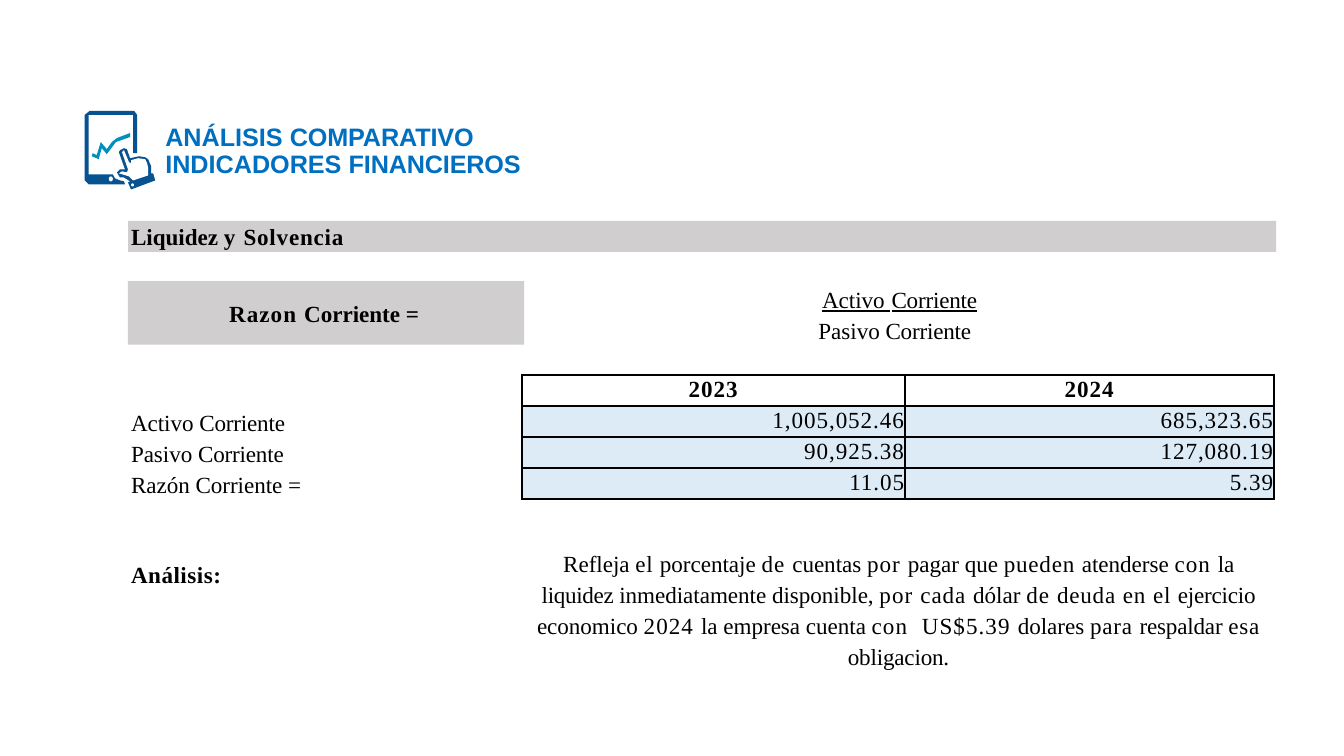
from dataclasses import dataclass

from lxml import etree
from pptx import Presentation
from pptx.dml.color import RGBColor
from pptx.enum.shapes import MSO_SHAPE
from pptx.enum.text import MSO_ANCHOR, PP_ALIGN
from pptx.oxml.ns import qn
from pptx.util import Inches, Pt

LEFT, CENTER, RIGHT = PP_ALIGN.LEFT, PP_ALIGN.CENTER, PP_ALIGN.RIGHT
TOP, MIDDLE = MSO_ANCHOR.TOP, MSO_ANCHOR.MIDDLE
RECTANGLE, OVAL = MSO_SHAPE.RECTANGLE, MSO_SHAPE.OVAL

# Square grid: 133.33 columns by 75 rows
CELL = Inches(0.1)
COLUMNS, ROWS = 133.33, 75
TITLE_ONLY = 5
LINE_ROWS = 3.08


@dataclass(frozen=True)
class Theme:
    heading_font: str = "Arial"
    body_font: str = "Times New Roman"
    heading_size: float = 18
    body_size: float = 16.5
    border_width: float = 1.5
    heading: str = "006FC0"
    ink: str = "000000"
    band: str = "D0CECE"
    paper: str = "FFFFFF"
    figure: str = "DDEBF7"
    device: str = "075392"
    trend: str = "0090BE"


@dataclass(frozen=True)
class Area:
    column: float
    row: float
    width: float
    height: float

    def emu(self) -> tuple[int, ...]:
        return tuple(grid(n) for n in (self.column, self.row, self.width, self.height))


@dataclass(frozen=True)
class Span:
    text: str
    spacing: float = 0


@dataclass(frozen=True)
class Block:
    """Text in an area; insets are in grid cells, fill is a colour or empty."""
    area: Area
    lines: list[list[Span]]
    align: PP_ALIGN = LEFT
    bold: bool = False
    underline: bool = False
    line_spacing: float = 1.0
    fill: str = ""
    anchor: MSO_ANCHOR = TOP
    left: float = 0.1
    top: float = 0.4
    right: float = 0


@dataclass(frozen=True)
class Outline:
    """Closed polygon with points in tenths of a grid cell."""
    fill: str
    points: list[tuple[int, int]]


THEME = Theme()

ICON = [
    Outline(THEME.device, [
        (136, 152), (136, 114), (133, 110), (89, 110), (84, 114), (84, 179),
        (88, 183), (124, 183), (123, 180), (119, 179), (114, 177), (112, 173),
        (88, 173), (88, 114), (132, 114), (132, 152)]),
    Outline(THEME.device, [
        (154, 179), (152, 172), (150, 172), (150, 165), (147, 158), (144, 156),
        (138, 155), (129, 157), (126, 148), (123, 147), (119, 149), (118, 151),
        (124, 168), (119, 168), (116, 171), (119, 176), (123, 176), (129, 180),
        (127, 181), (130, 188)]),
    Outline(THEME.paper, [
        (147, 174), (132, 179), (128, 175), (118, 172), (121, 170), (126, 171),
        (127, 168), (121, 151), (123, 149), (128, 161), (130, 162), (130, 159),
        (137, 157), (144, 158), (146, 162), (147, 167)]),
    Outline(THEME.trend, [
        (129, 132), (116, 137), (111, 141), (106, 148), (100, 141), (96, 154),
        (92, 152), (91, 155), (98, 158), (101, 147), (106, 153), (115, 141),
        (129, 136)]),
]
ICON_BUTTONS = [Area(10.8, 17.5, 0.4, 0.5), Area(13, 18.2, 0.3, 0.3)]

TITLE = [Span("ANÁLISIS "), Span("COMPARATIVO ", -0.1), Span("INDICADORES "),
         Span("FINANCIEROS", -0.1)]

ANALYSIS = [
    Span("Refleja "), Span("el ", 0.5), Span("porcentaje "), Span("de ", 0.8),
    Span("cuentas "), Span("por ", 0.8), Span("pagar que "), Span("pueden ", 0.6),
    Span("atenderse "), Span("con ", 0.8), Span("la liquidez ", -0.2),
    Span("inmediatamente disponible, "), Span("por ", 0.8), Span("cada ", 0.7),
    Span("dólar "), Span("de ", 0.8), Span("deuda ", 0.6), Span("en ", 0.7),
    Span("el ", 0.5), Span("ejercicio ", -0.1), Span("economico "),
    Span("2024 ", 0.8), Span("la empresa cuenta "), Span("con  US$5.39 ", 0.8),
    Span("dolares "), Span("para ", 0.6), Span("respaldar ", -0.1),
    Span("esa ", 0.6), Span("obligacion.", -0.1)]

BLOCKS = [
    Block(Area(12.7, 21.9, 113.9, 3.1),
          [[Span("Liquidez "), Span("y ", 0.9), Span("Solvencia", 0.6)]],
          bold=True, fill=THEME.band, left=0.3, top=0.15),
    Block(Area(12.7, 27.9, 39.3, 6.3),
          [[Span("Razon ", 0.8), Span("Corriente "), Span("=", 0.5)]],
          align=CENTER, bold=True, fill=THEME.band, anchor=MIDDLE,
          left=0, top=0, right=0.4),
    Block(Area(51.7, 27.9, 75.1, 3.1),
          [[Span("Activo"), Span(" ", 0.8), Span("Corriente", -0.1)]],
          align=CENTER, underline=True, left=0),
    Block(Area(81.1, 31, 16.3, 3.1), [[Span("Pasivo "), Span("Corriente", -0.1)]]),
    Block(Area(12.9, 40, 20, 9.5),
          [[Span("Activo "), Span("Corriente", -0.1)],
           [Span("Pasivo "), Span("Corriente", -0.1)],
           [Span("Razón Corriente "), Span("=", 0.6)]],
          line_spacing=1.12, top=0.23),
    Block(Area(12.9, 55.2, 9.5, 3.1), [[Span("Análisis:", 0.4)]], bold=True),
    Block(Area(53.1, 54, 72, 12.6), [ANALYSIS], align=CENTER,
          line_spacing=1.12, top=0.23),
]

RATIO_AREA = Area(51.8, 37.2, 74.6, 4 * LINE_ROWS)
RATIO_COLUMNS = [38, 36.6]
RATIO_ROWS = [
    ["2023", "2024"],
    ["1,005,052.46", "685,323.65"],
    ["90,925.38", "127,080.19"],
    ["11.05", "5.39"],
]


def grid(cells: float) -> int:
    return round(cells * CELL)


def color(code: str) -> RGBColor:
    return RGBColor.from_string(code)


def set_insets(target, left: float, top: float, right: float) -> None:
    target.margin_left, target.margin_top = grid(left), grid(top)
    target.margin_right, target.margin_bottom = grid(right), 0


def write(para, spans: list[Span], align=LEFT, bold=False, underline=False,
          name=THEME.body_font, size=THEME.body_size, ink=THEME.ink) -> None:
    para.alignment = align
    font = para.font
    font.name, font.size, font.bold = name, Pt(size), bold
    font.underline = underline
    font.color.rgb = color(ink)
    for span in spans:
        run = para.add_run()
        run.text = span.text
        if span.spacing:
            run.font._element.set("spc", str(round(span.spacing * 100)))


def paint(shape, fill: str) -> None:
    shape.shadow.inherit = False
    shape.fill.solid()
    shape.fill.fore_color.rgb = color(fill)
    shape.line.fill.background()


def draw_title(page) -> None:
    title = page.shapes.title
    title.left, title.top, title.width, title.height = Area(16.3, 11.7, 37, 6).emu()
    frame = title.text_frame
    frame.word_wrap, frame.vertical_anchor = True, TOP
    set_insets(frame, 0.1, 0.6, 0)
    para = frame.paragraphs[0]
    para.line_spacing, para.space_before = Pt(19.4), Pt(0)
    write(para, TITLE, bold=True, name=THEME.heading_font,
          size=THEME.heading_size, ink=THEME.heading)


def draw_icon(page) -> None:
    for outline in ICON:
        builder = page.shapes.build_freeform(*outline.points[0], scale=CELL / 10)
        builder.add_line_segments(outline.points[1:], close=True)
        paint(builder.convert_to_shape(), outline.fill)
    for button in ICON_BUTTONS:
        paint(page.shapes.add_shape(OVAL, *button.emu()), THEME.paper)


def draw_block(page, block: Block) -> None:
    if block.fill:
        box = page.shapes.add_shape(RECTANGLE, *block.area.emu())
        paint(box, block.fill)
    else:
        box = page.shapes.add_textbox(*block.area.emu())
    frame = box.text_frame
    frame.word_wrap, frame.vertical_anchor = True, block.anchor
    set_insets(frame, block.left, block.top, block.right)
    for index, spans in enumerate(block.lines):
        para = frame.paragraphs[0] if index == 0 else frame.add_paragraph()
        para.line_spacing = block.line_spacing
        write(para, spans, block.align, block.bold, block.underline)


def add_borders(cell) -> None:
    properties = cell._tc.get_or_add_tcPr()
    for side in ("a:lnL", "a:lnR", "a:lnT", "a:lnB"):
        line = etree.SubElement(properties, qn(side), w=str(Pt(THEME.border_width)))
        fill = etree.SubElement(line, qn("a:solidFill"))
        etree.SubElement(fill, qn("a:srgbClr"), val=THEME.ink)


def draw_ratio_table(page) -> None:
    table = page.shapes.add_table(
        len(RATIO_ROWS), len(RATIO_COLUMNS), *RATIO_AREA.emu()).table
    table.first_row = table.horz_banding = False
    for column, width in zip(table.columns, RATIO_COLUMNS):
        column.width = grid(width)
    for row_index, values in enumerate(RATIO_ROWS):
        header = row_index == 0
        table.rows[row_index].height = grid(LINE_ROWS)
        for column_index, value in enumerate(values):
            cell = table.cell(row_index, column_index)
            set_insets(cell, 0, 0.22, 0.1)
            add_borders(cell)
            cell.fill.solid()
            cell.fill.fore_color.rgb = color(THEME.paper if header else THEME.figure)
            write(cell.text_frame.paragraphs[0], [Span(value, 0.7)],
                  CENTER if header else RIGHT, bold=header)


def main() -> None:
    deck = Presentation()
    deck.slide_width, deck.slide_height = grid(COLUMNS), grid(ROWS)
    page = deck.slides.add_slide(deck.slide_layouts[TITLE_ONLY])
    draw_title(page)
    draw_icon(page)
    for block in BLOCKS:
        draw_block(page, block)
    draw_ratio_table(page)
    deck.save("out.pptx")


if __name__ == "__main__":
    main()
